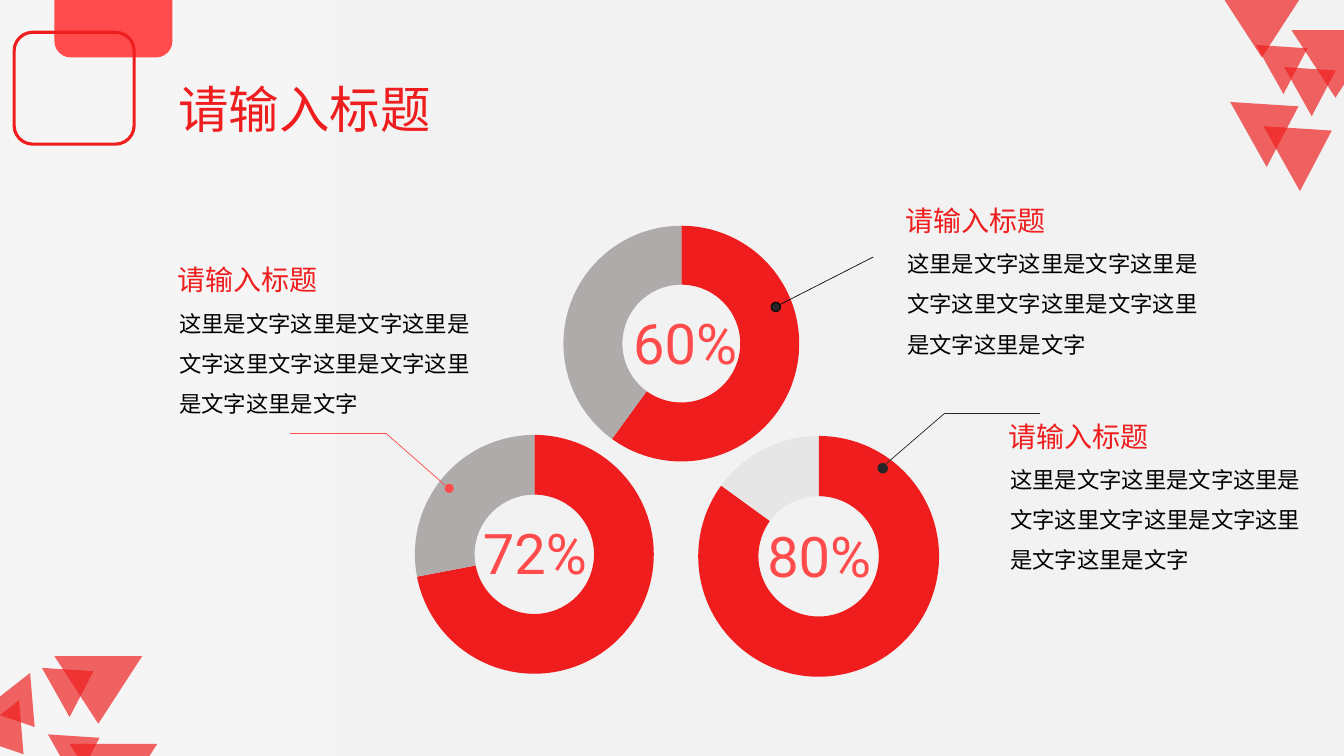
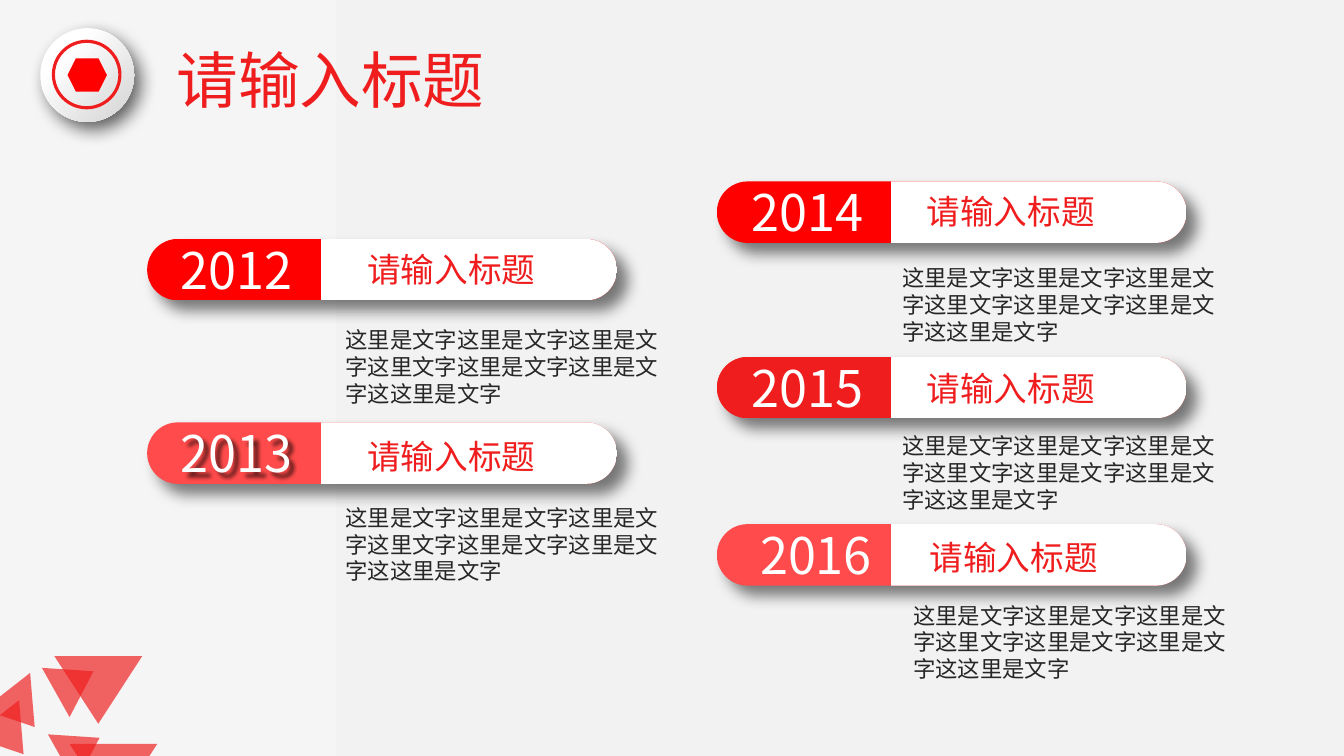
from lxml import etree
from pptx import Presentation
from pptx.chart.data import CategoryChartData
from pptx.dml.color import RGBColor
from pptx.enum.chart import XL_CHART_TYPE
from pptx.enum.shapes import MSO_CONNECTOR, MSO_SHAPE
from pptx.enum.text import MSO_ANCHOR, MSO_AUTO_SIZE, PP_ALIGN
from pptx.oxml.ns import qn
from pptx.util import Inches, Pt

DOUGHNUT = XL_CHART_TYPE.DOUGHNUT
STRAIGHT = MSO_CONNECTOR.STRAIGHT
OVAL, HEXAGON = MSO_SHAPE.OVAL, MSO_SHAPE.HEXAGON
TRIANGLE, ROUNDED = MSO_SHAPE.ISOSCELES_TRIANGLE, MSO_SHAPE.ROUNDED_RECTANGLE
TOP, CENTER, LEFT = MSO_ANCHOR.TOP, PP_ALIGN.CENTER, PP_ALIGN.LEFT
GROW = MSO_AUTO_SIZE.SHAPE_TO_FIT_TEXT

RED = RGBColor(0xEF, 0x1D, 0x1D)
PURE_RED = RGBColor(0xFF, 0x00, 0x00)
CORAL = RGBColor(0xFF, 0x4B, 0x4B)
GRAY = RGBColor(0xAF, 0xAB, 0xAB)
PALE_GRAY = RGBColor(0xE7, 0xE6, 0xE6)
BADGE_GRAY = RGBColor(0xD6, 0xD4, 0xD4)
DARK = RGBColor(0x26, 0x26, 0x26)
INK = RGBColor(0x0D, 0x0D, 0x0D)
BLACK = RGBColor(0x00, 0x00, 0x00)
WHITE = RGBColor(0xFF, 0xFF, 0xFF)
PAPER_LEFT = RGBColor(0xF5, 0xF5, 0xF5)
PAPER = RGBColor(0xF2, 0xF2, 0xF2)

CJK, LATIN = "Noto Sans CJK SC", "Roboto"
HEADING = "请输入标题"
CALLOUT_TEXT = "这里是文字这里是文字这里是文字这里文字这里是文字这里是文字这里是文字"
EVENT_TEXT = "这里是文字这里是文字这里是文字这里文字这里是文字这里是文字这这里是文字"

SMALL, MEDIUM, LARGE = (0.56, 0.43, 60.7), (0.74, 0.57, 60.7), (0.87, 0.67, 180)
TILTED = (0.59, 0.45, 142)
TOP_TRIANGLES = [
    (12.5, 0.37, SMALL), (12.81, 0.3, LARGE), (12.26, 0.91, MEDIUM),
    (12.78, 0.59, SMALL), (12.08, -0.1, LARGE), (12.59, 1.15, MEDIUM),
]
BOTTOM_TRIANGLES = [
    (-0.09, 6.81, TILTED), (0.52, 7.21, SMALL), (0.54, 6.51, LARGE),
    (-0.2, 7.08, TILTED), (0.46, 6.55, SMALL), (0.69, 7.38, LARGE),
]

RINGS = [
    dict(label="72%", share=72, rest=GRAY, at=(3.69, 4.17), middle=0.5, size=2.37),
    dict(label="80%", share=85, rest=PALE_GRAY, at=(6.51, 4.19), middle=0.5, size=2.39),
    dict(label="60%", share=60, rest=GRAY, at=(5.18, 2.08), middle=0.49, size=2.34),
]
RING_FRAME = (3.22, 2.66)
CALLOUTS = [
    dict(text=(1.68, 2.89), route=[(2.88, 4.3), (3.83, 4.3), (4.41, 4.81)],
         dot=(4.41, 4.8), line=CORAL, fill=CORAL, outline=None),
    dict(text=(9.92, 4.44), route=[(10.32, 4.1), (9.37, 4.1), (8.79, 4.6)],
         dot=(8.71, 4.6), line=DARK, fill=DARK, outline=DARK),
    dict(text=(8.9, 2.3), route=[(8.66, 2.55), (7.68, 3.05)],
         dot=(7.65, 3), line=INK, fill=DARK, outline=INK),
]

EVENTS = [
    dict(year="2012", color=PURE_RED, pill=(1.46, 2.37), year_left=1.69,
         heading=(3.54, 2.42), text=(3.33, 3.19)),
    dict(year="2013", color=CORAL, pill=(1.46, 4.19), year_left=1.69,
         heading=(3.54, 4.28), text=(3.33, 4.95), year_shadow=True),
    dict(year="2014", color=PURE_RED, pill=(7.11, 1.8), year_left=7.36,
         heading=(9.09, 1.84), text=(8.85, 2.57)),
    dict(year="2015", color=RED, pill=(7.11, 3.54), year_left=7.36,
         heading=(9.09, 3.6), text=(8.85, 4.24)),
    dict(year="2016", color=CORAL, pill=(7.11, 5.2), year_left=7.44,
         heading=(9.12, 5.28), text=(8.96, 5.92)),
]
PILL_SIZE, PILL_SPLIT = (4.66, 0.61), 0.37


def lengths(*values):
    return [Inches(value) for value in values]


def add_shadow(shape, alpha, blur, distance, angle):
    shape.shadow.inherit = False
    effects = shape._element.spPr.find(qn("a:effectLst"))
    shadow = etree.SubElement(effects, qn("a:outerShdw"), {
        "blurRad": str(Pt(blur)), "dist": str(Pt(distance)),
        "dir": str(angle * 60000), "algn": "tl", "rotWithShape": "0"})
    color = etree.SubElement(shadow, qn("a:srgbClr"), val=str(BLACK))
    etree.SubElement(color, qn("a:alpha"), val=str(alpha * 1000))


def blend(fill, stops, angle):
    fill.gradient()
    fill.gradient_angle = angle
    for stop, (position, color) in zip(fill.gradient_stops, stops):
        stop.position = position
        stop.color.rgb = color


def write(box, text, size, color, font=CJK, align=LEFT, wrap=True, spacing=None):
    frame = box.text_frame
    frame_format = dict(
        word_wrap=wrap, auto_size=GROW, vertical_anchor=TOP,
        margin_left=Inches(0.1), margin_right=Inches(0.1),
        margin_top=Inches(0.05), margin_bottom=Inches(0.05))
    for name, value in frame_format.items():
        setattr(frame, name, value)
    para = frame.paragraphs[0]
    para.alignment = align
    para.line_spacing = spacing
    span = para.add_run()
    span.text = text
    for name, value in dict(size=Pt(size), name=font, bold=False).items():
        setattr(span.font, name, value)
    span.font.color.rgb = color
    latin = span.font._element.find(qn("a:latin"))
    latin.addnext(latin.makeelement(qn("a:ea"), {"typeface": font}))


def add_text(page, at, text, size, color, **style):
    box = page.shapes.add_textbox(*lengths(*at))
    write(box, text, size, color, **style)
    return box


def add_shape(page, kind, at, fill=None, line=None, width=1.0):
    shape = page.shapes.add_shape(kind, *lengths(*at))
    shape.shadow.inherit = False
    if fill is None:
        shape.fill.background()
    else:
        shape.fill.solid()
        shape.fill.fore_color.rgb = fill
    if line is None:
        shape.line.fill.background()
    else:
        shape.line.color.rgb = line
        shape.line.width = Pt(width)
    return shape


def add_triangles(page, triangles):
    for left, top, (width, height, turn) in triangles:
        shape = add_shape(page, TRIANGLE, (left, top, width, height), RED)
        shape.rotation = turn
        color = shape._element.spPr.find(qn("a:solidFill"))[0]
        etree.SubElement(color, qn("a:alpha"), val="68000")


def add_page(deck, title_at, size):
    page = deck.slides.add_slide(deck.slide_layouts[5])
    title = page.shapes.title
    title.left, title.top, title.width, title.height = lengths(*title_at)
    write(title, HEADING, size, RED, align=CENTER)
    add_triangles(page, BOTTOM_TRIANGLES)
    return page


def add_ring(page, ring):
    left, top = ring["at"]
    width, height = RING_FRAME
    share = ring["share"]
    data = CategoryChartData()
    data.categories = ["1", "2", "3", "4"]
    data.add_series("Series 1", (share, None, None, 100 - share))
    chart = page.shapes.add_chart(
        DOUGHNUT, *lengths(left, top, width, height), data).chart
    chart.has_legend = chart.has_title = False
    chart.font.size, chart.font.name = Pt(10), "Calibri"
    chart.font.color.rgb = BLACK
    plot = chart.plots[0]
    plot.vary_by_categories = True
    for index, color in ((0, RED), (3, ring["rest"])):
        point = plot.series[0].points[index].format
        point.fill.solid()
        point.fill.fore_color.rgb = color
        point.line.fill.background()
    root = chart._chartSpace
    for hole in root.iter(qn("c:holeSize")):
        hole.set("val", "75")
    area = root.find(".//" + qn("c:plotArea"))
    for old in area.findall(qn("c:layout")):
        area.remove(old)
    layout = area.makeelement(qn("c:layout"), {})
    area.insert(0, layout)
    manual = etree.SubElement(layout, qn("c:manualLayout"))
    wide, high = ring["size"] / width, ring["size"] / height
    settings = [
        ("layoutTarget", "inner"), ("xMode", "edge"), ("yMode", "edge"),
        ("x", ring["middle"] - wide / 2), ("y", 0.5 - high / 2),
        ("w", wide), ("h", high)]
    for tag, value in settings:
        etree.SubElement(manual, qn("c:" + tag), val=str(value))
    add_text(page, (left + 0.71, top + 0.93, 1.81, 0.77), ring["label"], 40, CORAL,
             font=LATIN, align=CENTER)


def add_callout(page, callout):
    route = callout["route"]
    for start, end in zip(route, route[1:]):
        line = page.shapes.add_connector(STRAIGHT, *lengths(*start, *end))
        line.line.color.rgb = callout["line"]
        line.line.width = Pt(0.5)
        etree.SubElement(line._element.spPr, qn("a:effectLst"))
    add_shape(page, OVAL, (*callout["dot"], 0.09, 0.09),
              callout["fill"], callout["outline"])
    left, top = callout["text"]
    add_text(page, (left, top, 3.15, 1.3), CALLOUT_TEXT, 16, BLACK, spacing=1.5)
    add_text(page, (left - 0.02, top - 0.33, 1.59, 0.43), HEADING, 20, RED,
             align=CENTER, wrap=False)


def add_event(page, event):
    left, top = event["pill"]
    pill = add_shape(page, ROUNDED, (left, top, *PILL_SIZE))
    pill.adjustments[0] = 0.5
    blend(pill.fill, [(PILL_SPLIT, event["color"]), (PILL_SPLIT, WHITE)], 0)
    add_shadow(pill, 51, 11, 10, 45)
    year = add_text(page, (event["year_left"], top - 0.05, 1.59, 0.7),
                    event["year"], 36, WHITE)
    if event.get("year_shadow"):
        add_shadow(year, 60, 3, 5, 45)
    add_text(page, (*event["heading"], 1.87, 0.5), HEADING, 24, RED,
             align=CENTER, wrap=False)
    add_text(page, (*event["text"], 3.37, 0.9), EVENT_TEXT, 16, DARK)


def build_rings(deck):
    page = add_page(deck, (1.52, 0.72, 3, 0.7), 36)
    add_triangles(page, TOP_TRIANGLES)
    add_shape(page, ROUNDED, (0.54, -0.4, 1.17, 0.97), CORAL)
    add_shape(page, ROUNDED, (0.14, 0.32, 1.19, 1.11), line=RED, width=2.25)
    for ring in RINGS:
        add_ring(page, ring)
    for callout in CALLOUTS:
        add_callout(page, callout)


def build_timeline(deck):
    page = add_page(deck, (1.32, 0.37, 3.92, 0.83), 44)
    badge = add_shape(page, OVAL, (0.4, 0.28, 0.93, 0.93))
    blend(badge.fill, [(0.26, WHITE), (0.98, BADGE_GRAY)], 315)
    add_shadow(badge, 61, 13, 7, 50)
    add_shape(page, OVAL, (0.53, 0.41, 0.66, 0.66), line=RED, width=2.25)
    add_shape(page, HEXAGON, (0.67, 0.58, 0.39, 0.33), PURE_RED)
    for event in EVENTS:
        add_event(page, event)


def main():
    deck = Presentation()
    deck.slide_width, deck.slide_height = lengths(13.33, 7.5)
    blend(deck.slide_master.background.fill, [(0, PAPER_LEFT), (0.5, PAPER)], 0)
    build_rings(deck)
    build_timeline(deck)
    deck.save("out.pptx")


if __name__ == "__main__":
    main()
